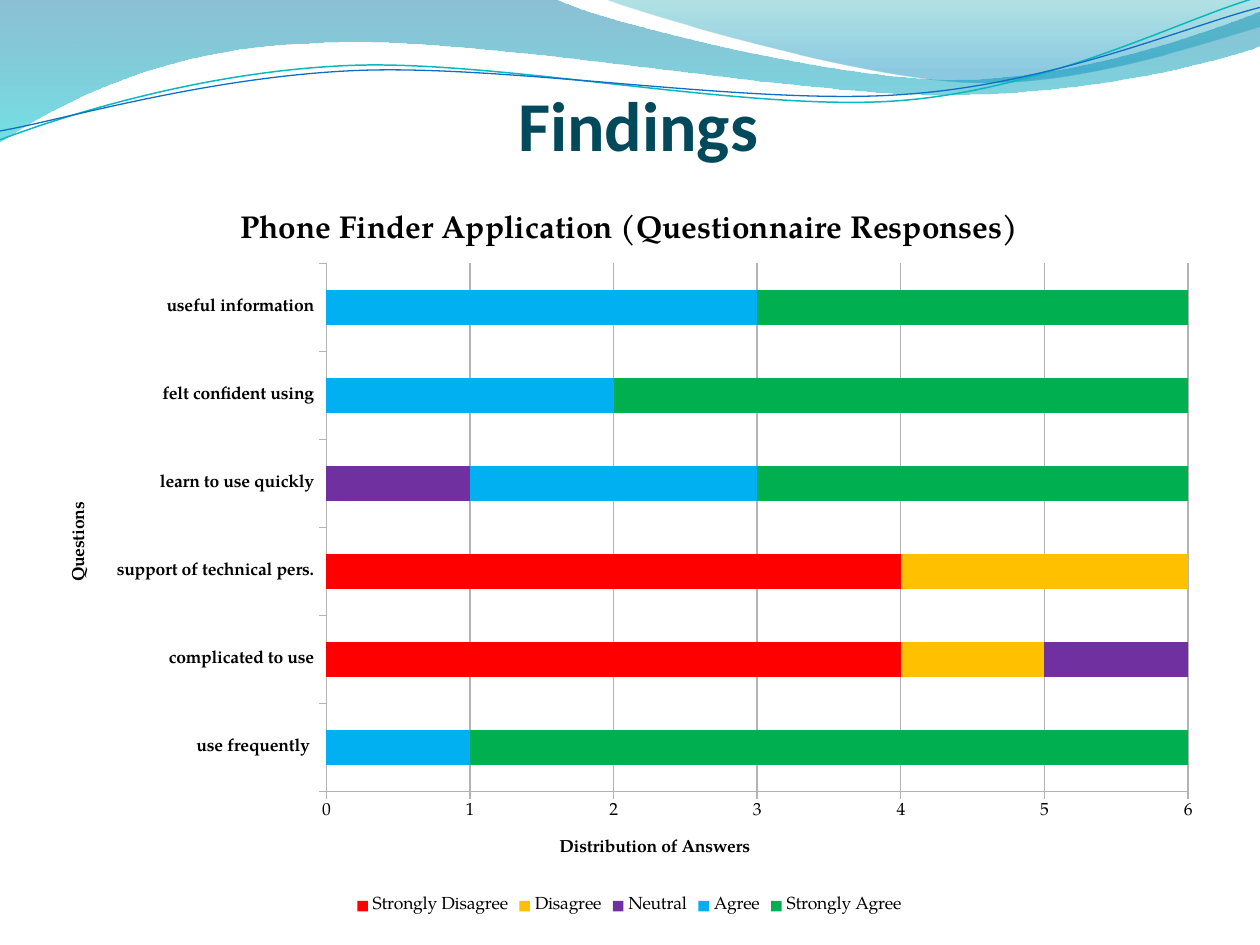
import math

from lxml import etree
from pptx import Presentation
from pptx import util as u
from pptx.chart.data import CategoryChartData
from pptx.dml.color import RGBColor
from pptx.enum import chart as ch, text
from pptx.oxml import ns, parse_xml

PX = 9144
BLACK = RGBColor(0x00, 0x00, 0x00)
GRID = RGBColor(0xB3, 0xB3, 0xB3)
TITLE = RGBColor(0x03, 0x49, 0x5C)
DEEP, AQUA = RGBColor(0x00, 0x74, 0xA1), RGBColor(0x00, 0xC6, 0xCF)
TEAL, SKY = RGBColor(0x00, 0xA1, 0xA9), RGBColor(0x00, 0x8B, 0xBF)
LINE_TEAL, LINE_BLUE = RGBColor(0x0A, 0xB8, 0xBF), RGBColor(0x0F, 0x6F, 0xC6)
HEAD_FONT, BODY_FONT = "Calibri", "TeX Gyre Pagella"
TILT = -2.7

QUESTIONS = ["use frequently ", "complicated to use", "support of technical pers.",
             "learn to use quickly", "felt confident using", "useful information"]
ANSWERS = [
    ("Strongly Disagree", (0, 4, 4, 0, 0, 0), RGBColor(0xFF, 0x00, 0x00)),
    ("Disagree", (0, 1, 2, 0, 0, 0), RGBColor(0xFF, 0xC0, 0x00)),
    ("Neutral", (0, 1, 0, 1, 0, 0), RGBColor(0x70, 0x30, 0xA0)),
    ("Agree", (1, 0, 0, 2, 2, 3), RGBColor(0x00, 0xB0, 0xF0)),
    ("Strongly Agree", (5, 0, 0, 3, 4, 3), RGBColor(0x00, 0xB0, 0x50)),
]

LEFT_WAVE = [(0, 0), (440, -1), (476, 17, 664, 63, 758, 63), (853, 63, 958, 26, 1000, 9),
             (1001, 36), (983, 44, 870, 76, 746, 75), (622, 75, 382, 28, 257, 34),
             (129, 36, 46, 83, -1, 113)]
RIGHT_WAVE = [(479, -1), (509, 11, 682, 62, 769, 65), (856, 69, 961, 32, 1000, 21), (1000, 0)]
TEAL_CURVE = [(0, 111), (48, 93, 158, 57, 277, 52), (395, 47, 593, 89, 713, 80),
              (833, 71, 938, 15, 998, -2)]
BLUE_CURVE = [(0, 104), (47, 96, 164, 61, 283, 56), (403, 51, 597, 84, 717, 75),
              (836, 67, 941, 21, 1000, 6)]


def emu(*lengths):
    """Turn px lengths into EMU."""
    return [u.Emu(round(n * PX)) for n in lengths]


def turn(point, center, degrees):
    """Rotate a point clockwise about a center."""
    a = math.radians(degrees)
    dx, dy = point[0] - center[0], point[1] - center[1]
    return (center[0] + dx * math.cos(a) - dy * math.sin(a),
            center[1] + dx * math.sin(a) + dy * math.cos(a))


def outline(s, box, steps, close, tilt=0):
    """Draw a freeform of lines and cubic curves, tilted about its middle."""
    pts = [(box[0] + step[i], box[1] + step[i + 1])
           for step in steps for i in range(0, len(step), 2)]
    middle = [(min(axis) + max(axis)) / 2 for axis in zip(*pts)]
    pts = [emu(*turn(p, middle, -tilt)) for p in pts]
    builder = s.shapes.build_freeform(*pts[0], scale=1.0)
    builder.add_line_segments(pts[1:], close=close)
    sp = builder.convert_to_shape()
    sp.shadow.inherit = False
    sp.rotation = tilt
    lines = iter(list(sp.element.spPr.iter(ns.qn("a:lnTo"))))
    for step in steps[1:]:
        first = next(lines)
        if len(step) == 6:
            first.tag = ns.qn("a:cubicBezTo")
            for line in (next(lines), next(lines)):
                first.append(line[0])
                line.getparent().remove(line)
    return sp


def wave(s, box, steps, stops):
    """Add a wave with a translucent vertical gradient."""
    sp = outline(s, box, steps, True)
    sp.line.fill.background()
    sp.fill.gradient()
    sp.fill.gradient_angle = 270
    for stop, (position, color, _) in zip(sp.fill.gradient_stops, stops):
        stop.position = position
        stop.color.rgb = color
    tags = list(sp.element.spPr.iter(ns.qn("a:srgbClr")))
    for tag, (_, _, opacity) in zip(tags, stops):
        etree.SubElement(tag, ns.qn("a:alpha")).set("val", str(opacity * 1000))


def curve(s, box, steps, color, width):
    """Add an open curved line."""
    sp = outline(s, box, steps, False, TILT)
    sp.fill.background()
    sp.line.color.rgb = color
    sp.line.width = u.Pt(width)


def header(s, box):
    """Draw the wave band along the top of the slide."""
    wave(s, box, LEFT_WAVE, [(0, DEEP, 45), (1, AQUA, 55)])
    wave(s, box, RIGHT_WAVE, [(0, TEAL, 30), (0.8, SKY, 45)])
    curve(s, box, TEAL_CURVE, LINE_TEAL, 0.85)
    curve(s, box, BLUE_CURVE, LINE_BLUE, 0.75)


def heading(s, box):
    """Place and format the title placeholder."""
    sp = s.shapes.title
    sp.left, sp.top, sp.width, sp.height = emu(*box)
    tf = sp.text_frame
    tf.text = "Findings"
    tf.vertical_anchor = text.MSO_ANCHOR.BOTTOM
    tf.margin_left, tf.margin_top, tf.margin_right, tf.margin_bottom = emu(0, 0, 2, 0)
    p = tf.paragraphs[0]
    p.alignment = text.PP_ALIGN.CENTER
    style(p.font, 40, True, TITLE, HEAD_FONT)


def style(font, size, bold=False, color=BLACK, name=BODY_FONT):
    """Set the size, weight, colour and face of a font."""
    font.size, font.bold, font.name = u.Pt(size), bold, name
    font.color.rgb = color


def caption(title, words, size):
    """Fill a chart or axis title with bold words."""
    tf = title.text_frame
    tf.text = words
    style(tf.paragraphs[0].font, size, True)


def axis(ax, words, bold):
    """Format one chart axis and its title."""
    caption(ax.axis_title, words, 10)
    style(ax.tick_labels.font, 10, bold)
    ax.major_tick_mark = ch.XL_TICK_MARK.OUTSIDE
    ax.minor_tick_mark = ch.XL_TICK_MARK.NONE
    ax.format.line.color.rgb = GRID


def responses(s, box):
    """Add the stacked bar chart of questionnaire answers."""
    data = CategoryChartData()
    data.categories = QUESTIONS
    for name, values, _ in ANSWERS:
        data.add_series(name, values)
    chart = s.shapes.add_chart(ch.XL_CHART_TYPE.BAR_STACKED, *emu(*box), data).chart
    style(chart.font, 10)
    caption(chart.chart_title, "Phone Finder Application (Questionnaire Responses)", 18)
    plot = chart.plots[0]
    plot.gap_width, plot.overlap, plot.vary_by_categories = 150, 100, False
    for series, (_, _, color) in zip(plot.series, ANSWERS):
        series.format.fill.solid()
        series.format.fill.fore_color.rgb = color
    axis(chart.category_axis, "Questions", True)
    val = chart.value_axis
    axis(val, "Distribution of Answers", False)
    val.minimum_scale, val.maximum_scale, val.major_unit = 0, 6, 1
    val.has_major_gridlines = True
    val.major_gridlines.format.line.color.rgb = GRID
    chart.has_legend = True
    chart.legend.position = ch.XL_LEGEND_POSITION.BOTTOM
    chart.legend.include_in_layout = False
    style(chart.legend.font, 10)
    inner_plot(chart, box, (224, 62, 684, 419))


def inner_plot(chart, box, area):
    """Fix the inner plot area, given in px inside the chart box."""
    plot = chart.element.find(".//" + ns.qn("c:plotArea"))
    for old in plot.findall(ns.qn("c:layout")):
        plot.remove(old)
    edges = "".join(f'<c:{k} val="{n / full}"/>'
                    for k, n, full in zip("xywh", area, box[2:] * 2))
    plot.insert(0, parse_xml(
        f'<c:layout {ns.nsdecls("c")}><c:manualLayout><c:layoutTarget val="inner"/>'
        f'<c:xMode val="edge"/><c:yMode val="edge"/>{edges}</c:manualLayout></c:layout>'))


def main():
    """Build and save the slide."""
    prs = Presentation()
    prs.slide_width, prs.slide_height = emu(1000, 750)
    s = prs.slides.add_slide(prs.slide_layouts[5])
    header(s, (0, 0))
    heading(s, (161, 60, 693, 71))
    responses(s, (35, 147, 929, 583))
    prs.save("out.pptx")


if __name__ == "__main__":
    main()
